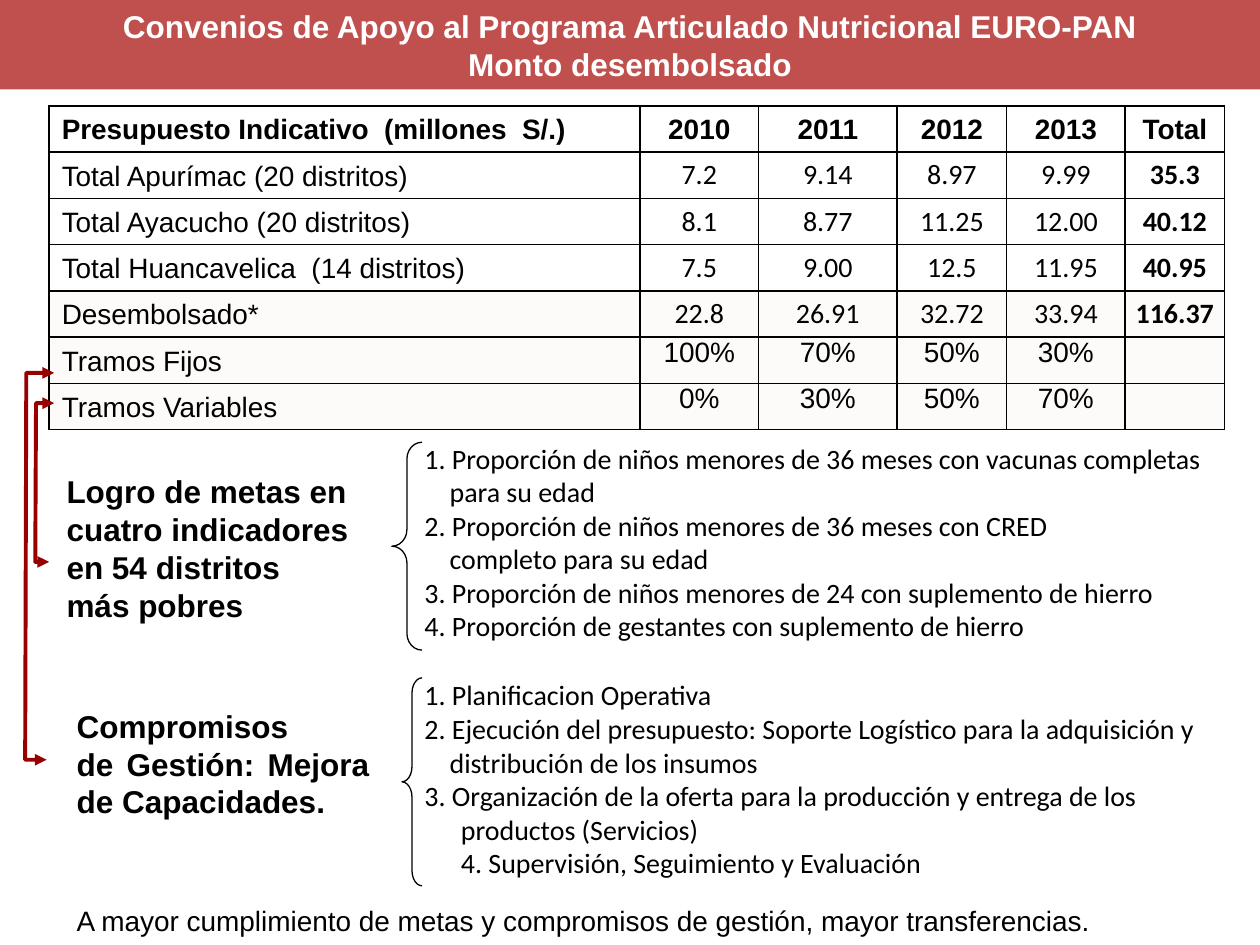
from dataclasses import dataclass

from lxml import etree
from pptx import Presentation
from pptx import util as u
from pptx.dml.color import RGBColor
from pptx.enum import shapes, text
from pptx.oxml import ns

COLUMNS, ROWS = 100, 75
UNIT = u.Inches(0.1)


@dataclass(frozen=True)
class Theme:
    banner: str = "C0504D"
    paper: str = "FFFFFF"
    tint: str = "FCFBF9"
    ink: str = "000000"
    arrow: str = "990000"
    sans: str = "Arial"
    body: str = "Calibri"
    heading_size: int = 18
    text_size: int = 16
    rule: float = 1
    brace: float = 0.75
    arrow_width: float = 2.25


THEME = Theme()


@dataclass(frozen=True)
class Box:
    left: float
    top: float
    width: float
    height: float

    def within(self, left, top, width, height):
        return Box(self.left + left, self.top + top, width, height)

    def point(self, x, y):
        return grid(self.left + x * self.width), grid(self.top + y * self.height)

    def lengths(self):
        return [grid(n) for n in (self.left, self.top, self.width, self.height)]


def grid(count):
    return u.Emu(round(count * UNIT))


def color(value):
    return RGBColor.from_string(value)


def style(para, size, name=THEME.sans, bold=False, ink=THEME.ink, align=None):
    para.font.size = u.Pt(size)
    para.font.name = name
    para.font.bold = bold
    para.font.color.rgb = color(ink)
    para.alignment = align


def outline(shape, ink, width):
    shape.shadow.inherit = False
    shape.fill.background()
    shape.line.color.rgb = color(ink)
    shape.line.width = u.Pt(width)


def write(frame, lines, **look):
    frame.word_wrap = True
    frame.text = "\n".join(lines)
    for para in frame.paragraphs:
        style(para, **look)


def text_box(page, box, lines, **look):
    frame = page.shapes.add_textbox(*box.lengths()).text_frame
    write(frame, lines, **look)
    return frame


def banner(page, box, lines):
    bar = page.shapes.add_shape(shapes.MSO_SHAPE.RECTANGLE, *box.lengths())
    bar.shadow.inherit = False
    bar.fill.solid()
    bar.fill.fore_color.rgb = color(THEME.banner)
    bar.line.fill.background()
    bar.text_frame.vertical_anchor = text.MSO_ANCHOR.MIDDLE
    write(bar.text_frame, lines, size=THEME.heading_size, bold=True,
          ink=THEME.paper, align=text.PP_ALIGN.CENTER)


def rule_cell(cell):
    properties = cell._tc.get_or_add_tcPr()
    for side in ("lnL", "lnR", "lnT", "lnB"):
        line = etree.SubElement(properties, ns.qn(f"a:{side}"), w=str(u.Pt(THEME.rule)))
        fill = etree.SubElement(line, ns.qn("a:solidFill"))
        etree.SubElement(fill, ns.qn("a:srgbClr"), val=THEME.ink)


def budget_table(page, box, widths, rows):
    table = page.shapes.add_table(len(rows), len(widths), *box.lengths()).table
    table.first_row = table.horz_banding = False
    for column, width in zip(table.columns, widths):
        column.width = grid(width)
    for row in table.rows:
        row.height = grid(box.height / len(rows))
    first_tinted, first_share, last = 4, 5, len(widths) - 1
    for r, values in enumerate(rows):
        for c, value in enumerate(values):
            cell = table.cell(r, c)
            rule_cell(cell)
            cell.fill.solid()
            cell.fill.fore_color.rgb = color(THEME.tint if r >= first_tinted else THEME.paper)
            cell.text = value
            amount = c > 0 and 0 < r < first_share
            cell.vertical_anchor = text.MSO_ANCHOR.BOTTOM
            if c and r:
                cell.vertical_anchor = text.MSO_ANCHOR.MIDDLE if amount else text.MSO_ANCHOR.TOP
                cell.margin_left = cell.margin_right = grid(0.5 if amount else 0.7)
                cell.margin_top = cell.margin_bottom = 0
            style(cell.text_frame.paragraphs[0], THEME.text_size,
                  name=THEME.body if amount else THEME.sans,
                  bold=r == 0 or (amount and c == last),
                  align=text.PP_ALIGN.CENTER if c else None)


def section(page, box, heading, heading_box, align, brace_box, curve, items):
    text_box(page, box.within(*heading_box), heading,
             size=THEME.heading_size, bold=True, align=align)
    brace = page.shapes.add_shape(shapes.MSO_SHAPE.LEFT_BRACE,
                                  *box.within(*brace_box).lengths())
    brace.adjustments[0] = curve
    outline(brace, THEME.ink, THEME.brace)
    frame = text_box(page, box.within(32.7, 0, 66.1, box.height),
                     [line for line, _, _ in items],
                     size=THEME.text_size, name=THEME.body)
    frame.vertical_anchor = text.MSO_ANCHOR.MIDDLE
    for para, (_, margin, indent) in zip(frame.paragraphs, items):
        properties = para._p.get_or_add_pPr()
        properties.set("marL", str(grid(margin)))
        properties.set("indent", str(grid(indent)))


def elbow(page, box, slant, reach):
    builder = page.shapes.build_freeform(*box.point(1, 0))
    corners = [(slant, 0), (0, 1), (reach, 1)]
    builder.add_line_segments([box.point(*corner) for corner in corners], close=False)
    arrow = builder.convert_to_shape()
    outline(arrow, THEME.arrow, THEME.arrow_width)
    for end in ("headEnd", "tailEnd"):
        etree.SubElement(arrow.line._get_or_add_ln(), ns.qn(f"a:{end}"), type="triangle")


def main():
    deck = Presentation()
    deck.slide_width, deck.slide_height = grid(COLUMNS), grid(ROWS)
    page = deck.slides.add_slide(deck.slide_layouts[6])

    banner(page, Box(0, 0, COLUMNS, 7.1), [
        "Convenios de Apoyo al Programa Articulado Nutricional EURO-PAN",
        "Monto desembolsado",
    ])
    budget_table(page, Box(3.9, 8.4, 93.3, 25.7), [46.9, 9.4, 11, 8.7, 9.4, 7.9], [
        ["Presupuesto Indicativo  (millones  S/.)", "2010", "2011", "2012", "2013", "Total"],
        ["Total Apurímac (20 distritos)", "7.2", "9.14", "8.97", "9.99", "35.3"],
        ["Total Ayacucho (20 distritos)", "8.1", "8.77", "11.25", "12.00", "40.12"],
        ["Total Huancavelica  (14 distritos)", "7.5", "9.00", "12.5", "11.95", "40.95"],
        ["Desembolsado*", "22.8", "26.91", "32.72", "33.94", "116.37"],
        ["Tramos Fijos", "100%", "70%", "50%", "30%", ""],
        ["Tramos Variables", "0%", "30%", "50%", "70%", ""],
    ])
    section(page, Box(0, 34.4, COLUMNS, 17.2),
            ["Logro de metas en cuatro indicadores en 54 distritos más pobres"],
            (4.3, 2.6, 24.4, 13.1), None, (31.1, 0.7, 2.4, 16.5), 0.55, [
                ("1. Proporción de niños menores de 36 meses con vacunas completas para su edad", 2, -2),
                ("2. Proporción de niños menores de 36 meses con CRED", 2, -2),
                ("completo para su edad", 2, 0),
                ("3. Proporción de niños menores de 24 con suplemento de hierro", 2, -2),
                ("4. Proporción de gestantes con suplemento de hierro", 2, -2),
            ])
    section(page, Box(0, 53.2, COLUMNS, 17.2),
            ["Compromisos", "de Gestión: Mejora de Capacidades."],
            (5.1, 2.4, 25.2, 10.1), text.PP_ALIGN.JUSTIFY, (31.9, 0.6, 1.6, 16.5), 0.76, [
                ("1. Planificacion Operativa", 0, 0),
                ("2. Ejecución del presupuesto: Soporte Logístico para la adquisición y "
                 "distribución de los insumos", 2, -2),
                ("3. Organización de la oferta para la producción y entrega de los "
                 "productos (Servicios)", 2.9, -2.9),
                ("4. Supervisión, Seguimiento y Evaluación", 2.9, 0),
            ])
    elbow(page, Box(2, 29.6, 2.3, 30.7), 0.04, 0.74)
    elbow(page, Box(2.8, 32, 1.5, 12.6), 0.04, 0.73)
    text_box(page, Box(5.1, 71.2, 88.2, 3.7),
             ["A mayor cumplimiento de metas y compromisos de gestión, mayor transferencias."],
             size=THEME.text_size)
    deck.save("out.pptx")


if __name__ == "__main__":
    main()
